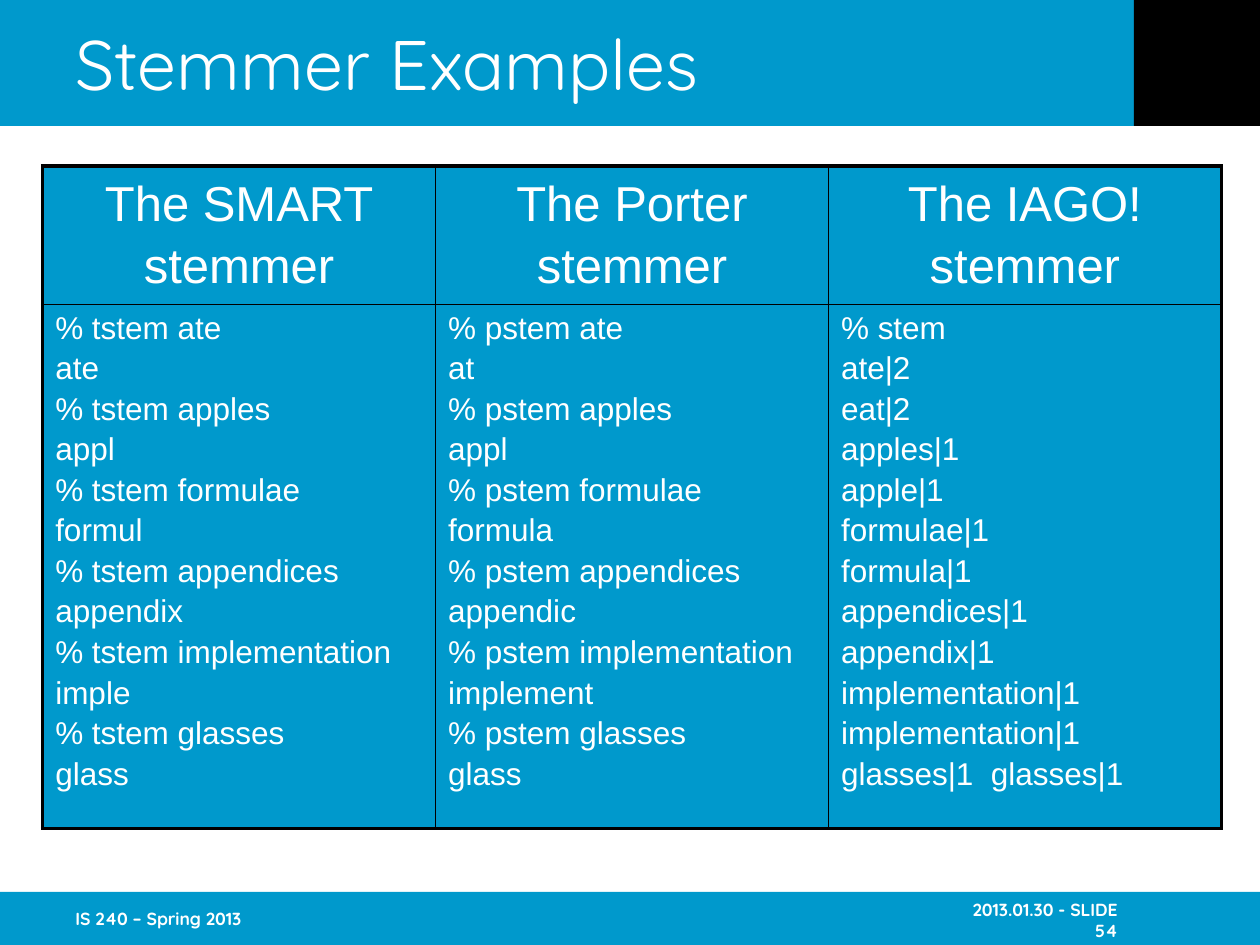
from pptx import Presentation
from pptx.dml.color import RGBColor
from pptx.enum.shapes import MSO_SHAPE
from pptx.enum.text import MSO_ANCHOR as ANCHOR, PP_ALIGN as ALIGN
from pptx.oxml import parse_xml
from pptx.oxml.ns import nsdecls
from pptx.util import Cm, Pt

COLORS = {"blue": "0099CC", "black": "000000", "white": "FFFFFF"}
HEADING_FONT, TABLE_FONT = "Quicksand", "Arial"
THICK, THIN = 2.25, 1

HEADERS = [["The SMART", "stemmer"], ["The Porter", "stemmer"], ["The IAGO!", "stemmer"]]
WORDS = ["ate", "apples", "formulae", "appendices", "implementation", "glasses"]
SMART_STEMS = ["ate", "appl", "formul", "appendix", "imple", "glass"]
PORTER_STEMS = ["at", "appl", "formula", "appendic", "implement", "glass"]
IAGO_LINES = ["% stem", "ate|2", "eat|2", "apples|1", "apple|1", "formulae|1",
              "formula|1", "appendices|1", "appendix|1", "implementation|1",
              "implementation|1", "glasses|1  glasses|1"]


def session(command, stems):
    return [line for word, stem in zip(WORDS, stems)
            for line in (f"% {command} {word}", stem)]


def rgb(name):
    return RGBColor.from_string(COLORS[name])


def style(p, font, size, bold=False, align=ALIGN.LEFT):
    p.alignment = align
    p.font.name = font
    p.font.size = Pt(size)
    p.font.bold = bold
    p.font.color.rgb = rgb("white")


def add_block(s, x, y, w, h, color):
    sp = s.shapes.add_shape(MSO_SHAPE.RECTANGLE, Cm(x), Cm(y), Cm(w), Cm(h))
    sp.shadow.inherit = False
    sp.fill.solid()
    sp.fill.fore_color.rgb = rgb(color)
    sp.line.fill.background()


def add_label(s, x, y, w, h, text, size, bold=False, align=ALIGN.LEFT,
              anchor=ANCHOR.MIDDLE, right=0.0, bottom=0.13):
    tf = s.shapes.add_textbox(Cm(x), Cm(y), Cm(w), Cm(h)).text_frame
    tf.word_wrap = True
    tf.vertical_anchor = anchor
    tf.margin_left, tf.margin_right = Cm(0.25), Cm(right)
    tf.margin_top, tf.margin_bottom = Cm(0.13), Cm(bottom)
    p = tf.paragraphs[0]
    p.text = text
    style(p, HEADING_FONT, size, bold, align)


def add_header(s, x, y, w, h):
    add_block(s, x, y, w, h, "blue")
    add_block(s, x + w - h, y, h, h, "black")
    add_label(s, x + 1.27, y, w - h - 1.27, h, "Stemmer Examples", 40)


def add_footer(s, x, y, w, h):
    add_block(s, x, y, w, h, "blue")
    add_label(s, x + 1.27, y, 5.28, h, "IS 240 – Spring 2013", 10, True)
    add_label(s, x + w - 6.55, y, 5.28, h, "2013.01.30 - SLIDE 54", 10, True,
              ALIGN.RIGHT, ANCHOR.BOTTOM, right=1.6, bottom=0.08)


def set_borders(cell, widths):
    tc_pr = cell._tc.get_or_add_tcPr()
    for side, width in zip("LRTB", widths):
        tc_pr.append(parse_xml(
            f'<a:ln{side} {nsdecls("a")} w="{Pt(width)}"><a:solidFill>'
            f'<a:srgbClr val="{COLORS["black"]}"/></a:solidFill></a:ln{side}>'))


def fill_cell(cell, lines, size, gap, align, anchor):
    cell.fill.solid()
    cell.fill.fore_color.rgb = rgb("blue")
    cell.vertical_anchor = anchor
    tf = cell.text_frame
    tf.text = "\n".join(lines)
    for i, p in enumerate(tf.paragraphs):
        style(p, TABLE_FONT, size, align=align)
        p.space_before = Pt(gap if i else 0)


def add_stemmer_table(s, x, y, w, row_heights):
    bodies = [session("tstem", SMART_STEMS), session("pstem", PORTER_STEMS), IAGO_LINES]
    rows = [(HEADERS, 28, 4.5, ALIGN.CENTER, ANCHOR.MIDDLE),
            (bodies, 18, 3, ALIGN.LEFT, ANCHOR.TOP)]
    n_cols = len(HEADERS)
    table = s.shapes.add_table(len(rows), n_cols, Cm(x), Cm(y), Cm(w),
                               Cm(sum(row_heights))).table
    for col in table.columns:
        col.width = Cm(w / n_cols)
    for r, (texts, size, gap, align, anchor) in enumerate(rows):
        table.rows[r].height = Cm(row_heights[r])
        for c, lines in enumerate(texts):
            cell = table.cell(r, c)
            outer = (c == 0, c == n_cols - 1, r == 0, r == len(rows) - 1)
            set_borders(cell, [THICK if edge else THIN for edge in outer])
            fill_cell(cell, lines, size, gap, align, anchor)


def main():
    prs = Presentation()
    prs.slide_width, prs.slide_height = Cm(25.4), Cm(19.05)
    s = prs.slides.add_slide(prs.slide_layouts[6])
    add_header(s, 0, 0, 25.4, 2.54)
    add_footer(s, 0, 17.98, 25.4, 1.07)
    add_stemmer_table(s, 0.86, 3.35, 23.76, [2.64, 10.54])
    prs.save("out.pptx")


if __name__ == "__main__":
    main()
